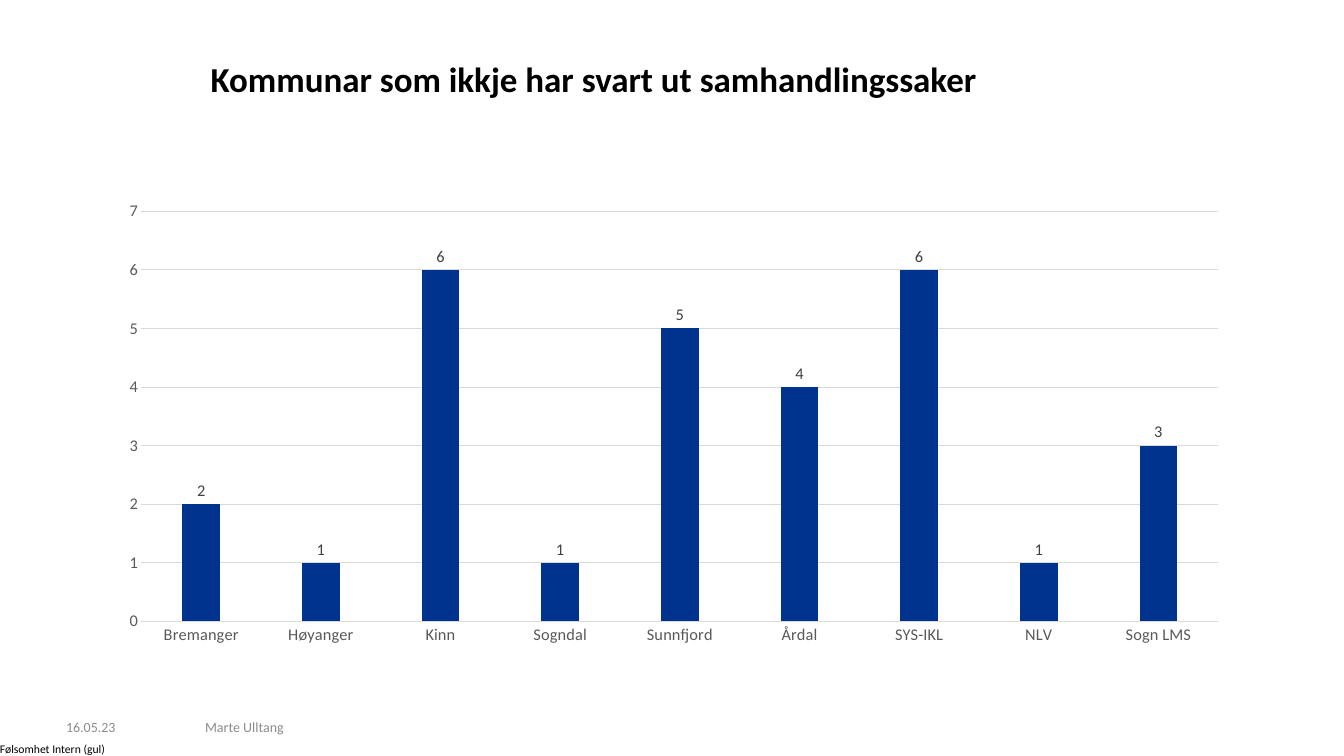
from dataclasses import dataclass

from pptx import Presentation
from pptx.chart.data import CategoryChartData as ChartData
from pptx.dml.color import RGBColor
from pptx.enum.chart import XL_CHART_TYPE as Kind
from pptx.enum.chart import XL_LABEL_POSITION as Spot
from pptx.enum.chart import XL_TICK_MARK as Tick
from pptx.enum.text import MSO_ANCHOR as Anchor
from pptx.enum.text import MSO_AUTO_SIZE as Fit
from pptx.enum.text import PP_ALIGN as Align
from pptx.util import Emu, Pt

FONT = "Calibri"
BLACK = RGBColor(0x00, 0x00, 0x00)
DARK = RGBColor(0x40, 0x40, 0x40)
GREY = RGBColor(0x59, 0x59, 0x59)
PALE = RGBColor(0x8C, 0x8C, 0x8C)
RULE = RGBColor(0xD9, 0xD9, 0xD9)
BLUE = RGBColor(0x00, 0x33, 0x8D)

COUNTS = {
    "Bremanger": 2,
    "Høyanger": 1,
    "Kinn": 6,
    "Sogndal": 1,
    "Sunnfjord": 5,
    "Årdal": 4,
    "SYS-IKL": 6,
    "NLV": 1,
    "Sogn LMS": 3,
}


@dataclass
class Box:
    left: int
    top: int
    width: int
    height: int


@dataclass
class Note:
    text: str
    box: Box
    size: int
    color: RGBColor
    anchor: Anchor


NOTES = [
    Note("Følsomhet Intern (gul)", Box(0, 742, 108, 14), 10, BLACK, Anchor.TOP),
    Note("Marte Ulltang", Box(205, 717, 821, 20), 12, PALE, Anchor.MIDDLE),
    Note("16.05.23", Box(66, 717, 106, 20), 12, PALE, Anchor.MIDDLE),
]


def px(count: int) -> Emu:
    return Emu(round(count * 914400 / 84))


def place(box: Box) -> tuple[Emu, Emu, Emu, Emu]:
    return px(box.left), px(box.top), px(box.width), px(box.height)


def style(font, size: int, color: RGBColor, bold: bool = False) -> None:
    font.name = FONT
    font.size = Pt(size)
    font.bold = bold
    font.color.rgb = color


def write(shape, note: Note, bold: bool = False) -> None:
    frame = shape.text_frame
    frame.text = note.text
    frame.word_wrap = True
    frame.auto_size = Fit.NONE
    frame.vertical_anchor = note.anchor
    frame.margin_left = frame.margin_right = 0
    frame.margin_top = frame.margin_bottom = 0
    style(frame.paragraphs[0].runs[0].font, note.size, note.color, bold)


def add_title(slide) -> None:
    box = Box(66, 62, 1056, 46)
    title = slide.shapes.title
    title.left, title.top, title.width, title.height = place(box)
    text = "Kommunar som ikkje har svart ut samhandlingssaker"
    write(title, Note(text, box, 30, BLACK, Anchor.TOP), bold=True)
    line = title.text_frame.paragraphs[0]
    line.alignment = Align.CENTER
    line.line_spacing = Pt(32)


def rule(line) -> None:
    line.color.rgb = RULE
    line.width = Pt(0.75)


def add_bars(slide, box: Box) -> None:
    data = ChartData(number_format="0")
    data.categories = list(COUNTS)
    data.add_series("Series 1", list(COUNTS.values()))
    chart = slide.shapes.add_chart(
        Kind.COLUMN_CLUSTERED, *place(box), data
    ).chart
    style(chart.font, 14, BLACK)
    chart.has_title = False
    chart.has_legend = False

    for axis in (chart.category_axis, chart.value_axis):
        axis.major_tick_mark = axis.minor_tick_mark = Tick.NONE
        style(axis.tick_labels.font, 14, GREY)
    rule(chart.category_axis.format.line)
    scale = chart.value_axis
    scale.minimum_scale, scale.maximum_scale, scale.major_unit = 0, 7, 1
    scale.format.line.fill.background()
    rule(scale.major_gridlines.format.line)

    plot = chart.plots[0]
    plot.gap_width = 219
    plot.overlap = -27
    plot.vary_by_categories = False
    bars = plot.series[0]
    bars.format.fill.solid()
    bars.format.fill.fore_color.rgb = BLUE
    labels = bars.data_labels
    labels.show_value = True
    labels.position = Spot.OUTSIDE_END
    style(labels.font, 14, DARK)


def main() -> None:
    deck = Presentation()
    deck.slide_width, deck.slide_height = px(1344), px(756)
    slide = deck.slides.add_slide(deck.slide_layouts[5])
    add_title(slide)
    for note in NOTES:
        write(slide.shapes.add_textbox(*place(note.box)), note)
    add_bars(slide, Box(107, 192, 1134, 462))
    deck.save("out.pptx")


if __name__ == "__main__":
    main()
